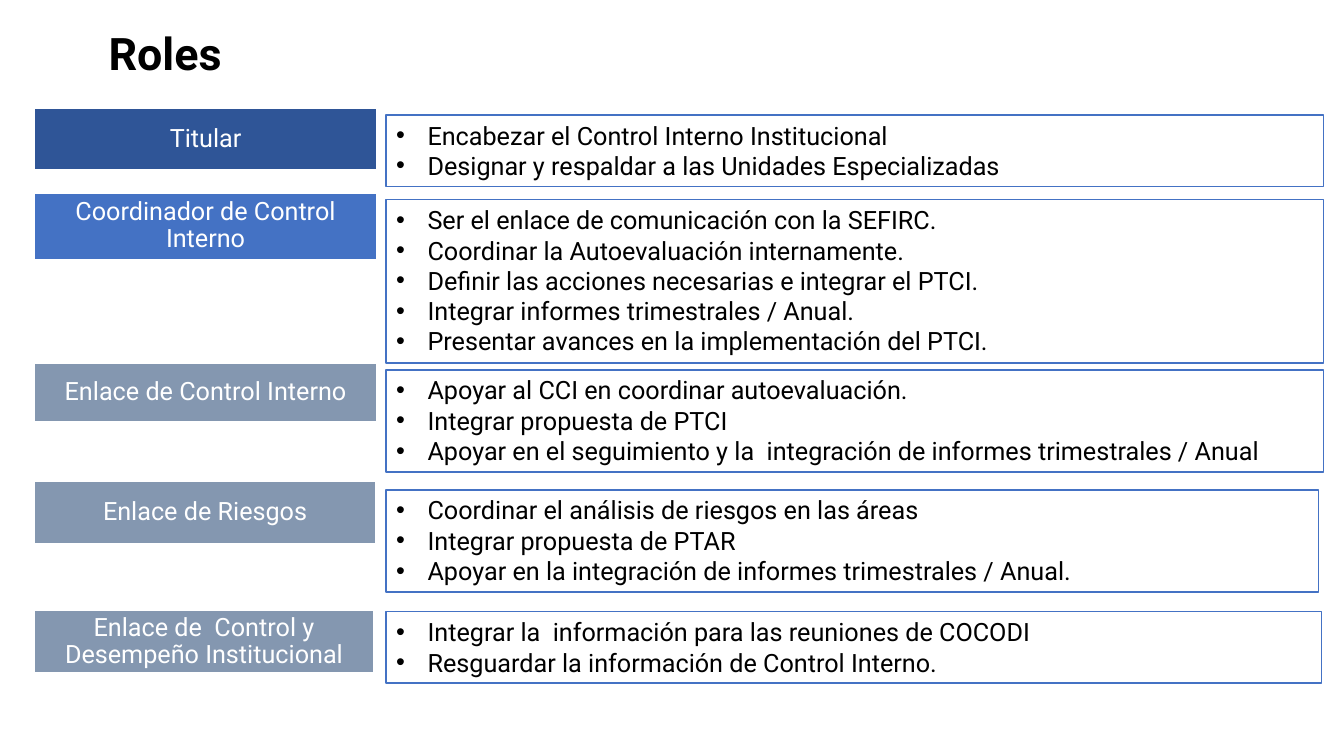
from lxml import etree
from pptx import Presentation
from pptx.dml.color import RGBColor
from pptx.enum.shapes import MSO_SHAPE as Shape
from pptx.enum.text import MSO_ANCHOR as Anchor, PP_ALIGN as Align
from pptx.oxml.ns import qn
from pptx.util import Pt

COLOURS = {
    "navy": "2F5597",
    "blue": "4472C4",
    "slate": "8497B0",
    "white": "FFFFFF",
    "black": "000000",
}
LABEL_LEFT = 24.5
DUTIES_LEFT = 275.8
LINE_HEIGHT = 21.9
DUTIES_PADDING = 7.2
BULLET_INDENT = 22.5

# role, colour, label (top, width, height, inset), duties (top, width), duties
ROLES = [
    ("Titular", "navy", (77, 244.8, 44.6, 5), (82.1, 669.6), [
        "Encabezar el Control Interno Institucional",
        "Designar y respaldar a las Unidades Especializadas",
    ]),
    ("Coordinador de Control Interno", "blue", (137.5, 244.8, 48.2, 8), (142.6, 669.6), [
        "Ser el enlace de comunicación con la SEFIRC.",
        "Coordinar la Autoevaluación internamente.",
        "Definir las acciones necesarias e integrar el PTCI.",
        "Integrar informes trimestrales / Anual.",
        "Presentar avances en la implementación del PTCI.",
    ]),
    ("Enlace de Control Interno", "slate", (259.2, 244.8, 42.5, 8.6), (264.2, 669.6), [
        "Apoyar al CCI en coordinar autoevaluación.",
        "Integrar propuesta de PTCI",
        "Apoyar en el seguimiento y la  integración de informes trimestrales / Anual",
    ]),
    ("Enlace de Riesgos", "slate", (343.4, 244.1, 45.4, 8.6), (349.9, 666), [
        "Coordinar el análisis de riesgos en las áreas",
        "Integrar propuesta de PTAR",
        "Apoyar en la integración de informes trimestrales / Anual.",
    ]),
    ("Enlace de  Control y Desempeño Institucional", "slate", (435.6, 242.6, 45.4, 8.6), (437, 668.2), [
        "Integrar la  información para las reuniones de COCODI",
        "Resguardar la información de Control Interno.",
    ]),
]


class RolesSlide:
    """Holds the text style and the slide being drawn."""

    font_name = "Roboto"
    body_size = 18

    def __init__(self, slide):
        self.slide = slide

    def colour(self, name):
        return RGBColor.from_string(COLOURS[name])

    def set_font(self, paragraph, colour, size=body_size, bold=False):
        font = paragraph.font
        font.name = self.font_name
        font.size = Pt(size)
        font.bold = bold
        font.color.rgb = self.colour(colour)

    def title(self, text, left, top, width, height):
        box = self.slide.shapes.add_textbox(Pt(left), Pt(top), Pt(width), Pt(height))
        box.text_frame.word_wrap = True
        heading = box.text_frame.paragraphs[0]
        heading.text = text
        heading.alignment = Align.CENTER
        self.set_font(heading, "black", 32, True)

    def rectangle(self, left, top, width, height, fill, line, line_width):
        box = self.slide.shapes.add_shape(
            Shape.RECTANGLE, Pt(left), Pt(top), Pt(width), Pt(height))
        box.shadow.inherit = False
        box.fill.solid()
        box.fill.fore_color.rgb = self.colour(fill)
        box.line.color.rgb = self.colour(line)
        box.line.width = Pt(line_width)
        box.text_frame.word_wrap = True
        return box.text_frame

    def label(self, role, fill, top, width, height, inset):
        frame = self.rectangle(LABEL_LEFT, top, width, height, fill, "white", 1.5)
        frame.vertical_anchor = Anchor.MIDDLE
        frame.margin_left = frame.margin_right = Pt(inset)
        frame.margin_top = frame.margin_bottom = Pt(inset)
        name = frame.paragraphs[0]
        name.text = role
        name.alignment = Align.CENTER
        name.line_spacing = 0.9
        self.set_font(name, "white")

    def duties(self, items, top, width):
        height = DUTIES_PADDING + LINE_HEIGHT * len(items)
        frame = self.rectangle(DUTIES_LEFT, top, width, height, "white", "blue", 1)
        frame.vertical_anchor = Anchor.TOP
        frame.text = "\n".join(items)
        for duty in frame.paragraphs:
            duty.alignment = Align.LEFT
            self.add_bullet(duty)
            self.set_font(duty, "black")

    def add_bullet(self, paragraph):
        properties = paragraph._p.get_or_add_pPr()
        properties.set("marL", str(Pt(BULLET_INDENT)))
        properties.set("indent", str(-Pt(BULLET_INDENT)))
        etree.SubElement(properties, qn("a:buFont")).set("typeface", "Arial")
        etree.SubElement(properties, qn("a:buChar")).set("char", "•")


def main():
    deck = Presentation()
    deck.slide_width, deck.slide_height = Pt(960), Pt(540)
    roles_slide = RolesSlide(deck.slides.add_slide(deck.slide_layouts[6]))
    roles_slide.title("Roles", 18, 15.1, 200, 46)
    for role, colour, label_box, duties_box, items in ROLES:
        roles_slide.label(role, colour, *label_box)
        roles_slide.duties(items, *duties_box)
    deck.save("out.pptx")


if __name__ == "__main__":
    main()
